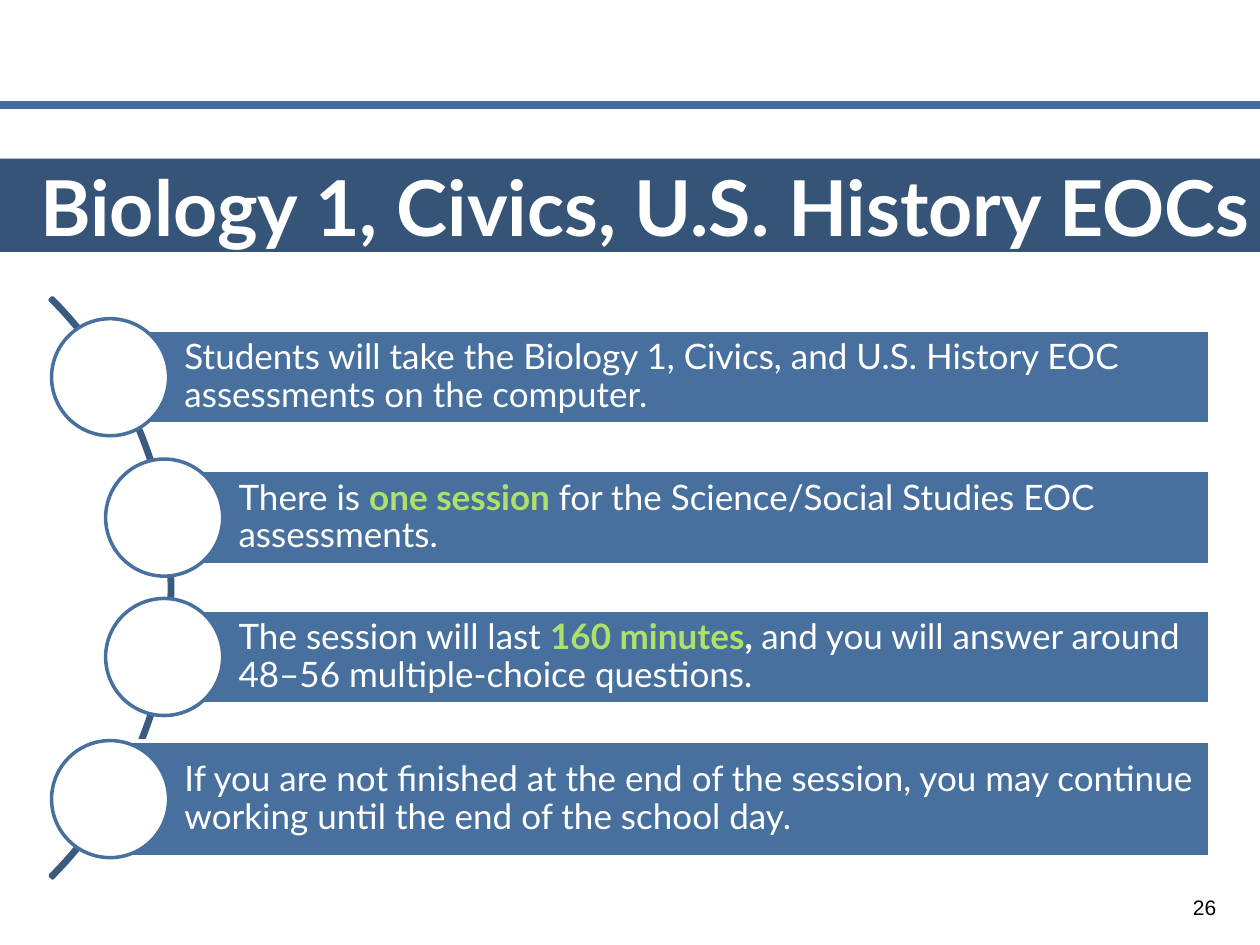
from lxml import etree
from pptx import Presentation
from pptx import util as u
from pptx.dml.color import RGBColor
from pptx.enum import shapes, text
from pptx.oxml.ns import qn

WHITE, BLUE, NAVY, LIME = "FFFFFF", "48709F", "365477", "AEE169"
KIND = shapes.MSO_SHAPE
RIGHT = 24.38  # shared right edge of the bars
DISC = 2.36

# left, top, height, runs of (words, colour, bold)
ROWS = [
    (2.22, 6.66, 1.89, [("Students will take the Biology 1, Civics, and U.S. History EOC "
                         "assessments on the computer.", WHITE, False)]),
    (3.31, 9.49, 1.89, [("There is ", WHITE, False), ("one session ", LIME, True),
                        ("for the Science/Social Studies EOC assessments.", WHITE, False)]),
    (3.31, 12.3, 1.89, [("The session will last ", WHITE, False), ("160 minutes", LIME, True),
                        (", ", WHITE, True),
                        ("and you will answer around 48–56 multiple-choice questions.",
                         WHITE, False)]),
    (2.22, 14.94, 2.34, [("If you are not finished at the end of the session, you may continue "
                          "working until the end of the school day.", WHITE, False)]),
]


def rgb(code):
    return RGBColor.from_string(code)


def put(item, **values):
    for name, value in values.items():
        setattr(item, name, value)


def draw(slide, kind, box, fill, line=None):
    shape = slide.shapes.add_shape(kind, *map(u.Cm, box))
    shape.shadow.inherit = False
    shape.fill.solid()
    shape.fill.fore_color.rgb = rgb(fill)
    if line:
        shape.line.color.rgb = rgb(line)
        shape.line.width = u.Pt(2)
    else:
        shape.line.fill.background()
    return shape


def write(shape, runs, size, font, align, pads, **para):
    """Fill a shape with one paragraph; pads are left, top, right, bottom."""
    frame = shape.text_frame
    sides = ("margin_left", "margin_top", "margin_right", "margin_bottom")
    put(frame, word_wrap=True, vertical_anchor=text.MSO_ANCHOR.MIDDLE,
        **dict(zip(sides, map(u.Cm, pads))))
    first = frame.paragraphs[0]
    put(first, alignment=align, **para)
    for words, color, bold in runs:
        run = first.add_run()
        run.text = words
        put(run.font, size=u.Pt(size), name=font, bold=bold)
        run.font.color.rgb = rgb(color)
    return first


def add_rule(slide, top, width):
    rule = slide.shapes.add_connector(shapes.MSO_CONNECTOR.STRAIGHT,
                                      0, u.Cm(top), u.Cm(width), u.Cm(top))
    rule.line.color.rgb = rgb("446D9E")
    rule.line.width = u.Pt(4.5)
    etree.SubElement(rule._element.spPr, qn("a:effectLst"))


def add_arc(slide, box):
    arc = draw(slide, KIND.BLOCK_ARC, box, "3A5A7F", "3A5A7F")
    for spot, value in enumerate((189, 27, 0.004)):
        arc.adjustments[spot] = value


def add_row(slide, box, runs):
    """Bar with a disc centred on its left edge."""
    left, top, _, height = box
    bar = draw(slide, KIND.RECTANGLE, box, BLUE, WHITE)
    write(bar, runs, 20, "Lato", text.PP_ALIGN.LEFT, (1.5, 0.15, 0.15, 0.15),
          line_spacing=0.9)
    disc = (left - DISC / 2, top + (height - DISC) / 2, DISC, DISC)
    draw(slide, KIND.OVAL, disc, WHITE, BLUE)


def add_title(slide, box, words):
    band = draw(slide, KIND.RECTANGLE, box, NAVY)
    line = write(band, [(words, WHITE, True)], 44, "Lato",
                 text.PP_ALIGN.CENTER, (0, 0, 0, 0))
    props = line._p.get_or_add_pPr()
    props.set("marL", str(u.Cm(0.64)))
    props.set("indent", "0")


def add_number(slide, box, words):
    note = slide.shapes.add_textbox(*map(u.Cm, box))
    write(note, [(words, "000000", False)], 12, "Arial",
          text.PP_ALIGN.CENTER, (0.25, 0.13, 0.25, 0.13))


def main():
    deck = Presentation()
    put(deck, slide_width=u.Cm(25.4), slide_height=u.Cm(19.05))
    slide = deck.slides.add_slide(deck.slide_layouts[6])
    add_rule(slide, 2.11, 25.4)
    add_arc(slide, (-13.06, 3.58, 16.54, 16.54))
    for left, top, height, runs in ROWS:
        add_row(slide, (left, top, RIGHT - left, height), runs)
    add_number(slide, (23.7, 17.78, 1.17, 1.02), "26")
    add_title(slide, (-0.02, 3.2, 25.42, 1.88), "Biology 1, Civics, U.S. History EOCs")
    deck.save("out.pptx")


if __name__ == "__main__":
    main()
